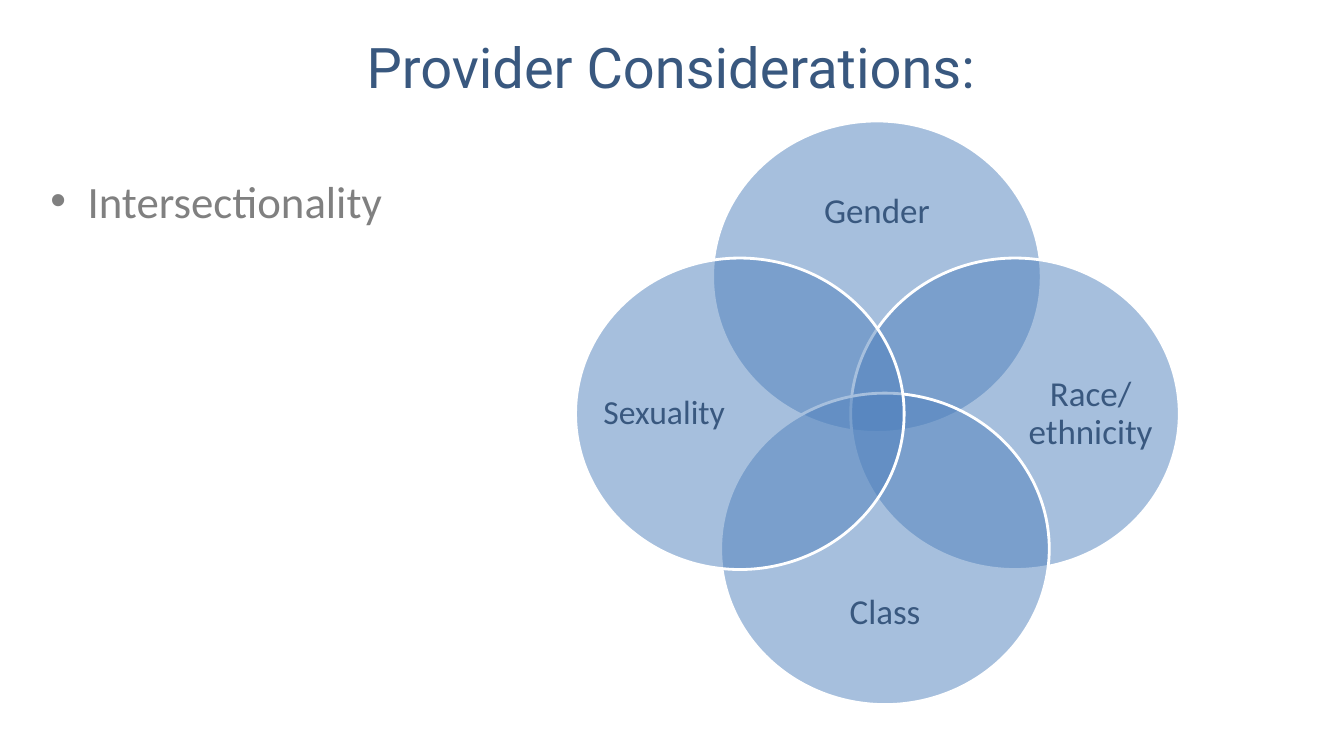
"""Build the slide on intersectionality with its four overlapping circles."""
from dataclasses import dataclass

from lxml import etree
from pptx import Presentation
from pptx.dml.color import RGBColor
from pptx.enum.shapes import MSO_SHAPE
from pptx.enum.text import MSO_ANCHOR, MSO_AUTO_SIZE, PP_ALIGN
from pptx.oxml.ns import qn
from pptx.shapes.base import BaseShape
from pptx.slide import Slide
from pptx.text.text import TextFrame, _Paragraph
from pptx.util import Inches, Pt

ELLIPSE = MSO_SHAPE.OVAL
MIDDLE, TOP = MSO_ANCHOR.MIDDLE, MSO_ANCHOR.TOP
CENTER, LEFT = PP_ALIGN.CENTER, PP_ALIGN.LEFT
NO_FIT = MSO_AUTO_SIZE.NONE
TITLE_ONLY = 5

SLIDE_WIDTH, SLIDE_HEIGHT = Inches(13.33), Inches(7.5)
COLUMN, ROW = SLIDE_WIDTH / 40, SLIDE_HEIGHT / 30


@dataclass(frozen=True)
class Theme:
    """Colours, fonts and type sizes of the slide."""
    navy: RGBColor = RGBColor(0x39, 0x58, 0x7F)
    blue: RGBColor = RGBColor(0x4F, 0x81, 0xBD)
    gray: RGBColor = RGBColor(0x80, 0x80, 0x80)
    white: RGBColor = RGBColor(0xFF, 0xFF, 0xFF)
    heading_font: str = "Roboto"
    body_font: str = "Calibri"
    title_size: int = 40
    bullet_size: int = 32
    label_size: int = 25
    small_label_size: int = 24


@dataclass(frozen=True)
class Area:
    """A rectangle in columns and rows of the grid."""
    column: float
    row: float
    columns: float
    rows: float

    def box(self) -> tuple[int, int, int, int]:
        """Return left, top, width and height as slide lengths."""
        return (round(self.column * COLUMN), round(self.row * ROW),
                round(self.columns * COLUMN), round(self.rows * ROW))


@dataclass(frozen=True)
class Span:
    """A size in columns and rows."""
    columns: float
    rows: float

    def around(self, column: float, row: float) -> Area:
        """Return the area of this size centred on a grid point."""
        return Area(column - self.columns / 2, row - self.rows / 2,
                    self.columns, self.rows)


@dataclass(frozen=True)
class Identity:
    """One circle: its centre, and how far its label is shifted outwards."""
    label: str
    column: float
    row: float
    shift_columns: float
    shift_rows: float
    label_span: Span
    size: int


THEME = Theme()
TITLE_AREA = Area(0.84, 0.68, 38.25, 3.88)
TOPIC_AREA = Area(1.2, 6.68, 18.75, 17.88)
CIRCLE = Span(9.78, 12.36)
WIDE, TALL = Span(7.53, 3.92), Span(3.75, 9.52)
IDENTITIES = (
    Identity("Gender", 26.1, 10.98, 0, -2.56, WIDE, THEME.label_size),
    Identity("Race/ ethnicity", 30.21, 16.42, 2.25, 0, TALL, THEME.label_size),
    Identity("Class", 26.34, 21.78, 0, 2.56, WIDE, THEME.label_size),
    Identity("Sexuality", 22.02, 16.42, -2.25, 0, TALL, THEME.small_label_size),
)
NO_MARGINS = dict.fromkeys(
    ("margin_left", "margin_top", "margin_right", "margin_bottom"), 0)


def apply_format(target: object, values: dict[str, object]) -> None:
    """Set each named attribute on the target."""
    for name, value in values.items():
        setattr(target, name, value)


def write_text(frame: TextFrame, text: str, anchor: MSO_ANCHOR,
               align: PP_ALIGN, font: dict[str, object]) -> _Paragraph:
    """Fill a frame with one formatted paragraph and return it."""
    apply_format(frame, {"word_wrap": True, "auto_size": NO_FIT,
                         "vertical_anchor": anchor})
    paragraph = frame.paragraphs[0]
    paragraph.alignment = align
    run = paragraph.add_run()
    run.text = text
    color = font["color"]
    apply_format(run.font, {"name": font["name"], "size": Pt(font["size"])})
    run.font.color.rgb = color
    return paragraph


def add_bullet(paragraph: _Paragraph, indent: int) -> None:
    """Give a paragraph a hanging round bullet."""
    properties = paragraph._p.get_or_add_pPr()
    properties.set("marL", str(indent))
    properties.set("indent", str(-indent))
    etree.SubElement(properties, qn("a:buFont")).set("typeface", "Arial")
    etree.SubElement(properties, qn("a:buChar")).set("char", "•")


def set_opacity(shape: BaseShape, share: float) -> None:
    """Make the solid fill of a shape see-through."""
    color = shape.fill._xPr.find(qn("a:solidFill"))[0]
    etree.SubElement(color, qn("a:alpha")).set("val", str(round(share * 100000)))


def add_title(slide: Slide, text: str) -> None:
    """Place and format the title placeholder."""
    title = slide.shapes.title
    apply_format(title, dict(zip(("left", "top", "width", "height"),
                                 TITLE_AREA.box())))
    write_text(title.text_frame, text, MIDDLE, CENTER,
               {"name": THEME.heading_font, "size": THEME.title_size,
                "color": THEME.navy})


def add_identity(slide: Slide, identity: Identity) -> None:
    """Draw one translucent circle and its label."""
    circle = slide.shapes.add_shape(
        ELLIPSE, *CIRCLE.around(identity.column, identity.row).box())
    circle.shadow.inherit = False
    circle.fill.solid()
    circle.fill.fore_color.rgb = THEME.blue
    set_opacity(circle, 0.5)
    circle.line.color.rgb = THEME.white
    circle.line.width = Pt(2)

    label_area = identity.label_span.around(
        identity.column + identity.shift_columns,
        identity.row + identity.shift_rows)
    frame = slide.shapes.add_textbox(*label_area.box()).text_frame
    apply_format(frame, NO_MARGINS)
    paragraph = write_text(frame, identity.label, MIDDLE, CENTER,
                           {"name": THEME.body_font, "size": identity.size,
                            "color": THEME.navy})
    paragraph.line_spacing = 0.9


def add_topic(slide: Slide, text: str) -> None:
    """Add the bulleted topic on the left."""
    frame = slide.shapes.add_textbox(*TOPIC_AREA.box()).text_frame
    paragraph = write_text(frame, text, TOP, LEFT,
                           {"name": THEME.body_font, "size": THEME.bullet_size,
                            "color": THEME.gray})
    add_bullet(paragraph, Inches(0.37))


def main() -> None:
    """Build and save the presentation."""
    presentation = Presentation()
    apply_format(presentation, {"slide_width": SLIDE_WIDTH,
                                "slide_height": SLIDE_HEIGHT})
    slide = presentation.slides.add_slide(presentation.slide_layouts[TITLE_ONLY])
    add_title(slide, "Provider Considerations:")
    for identity in IDENTITIES:
        add_identity(slide, identity)
    add_topic(slide, "Intersectionality")
    presentation.save("out.pptx")


if __name__ == "__main__":
    main()
